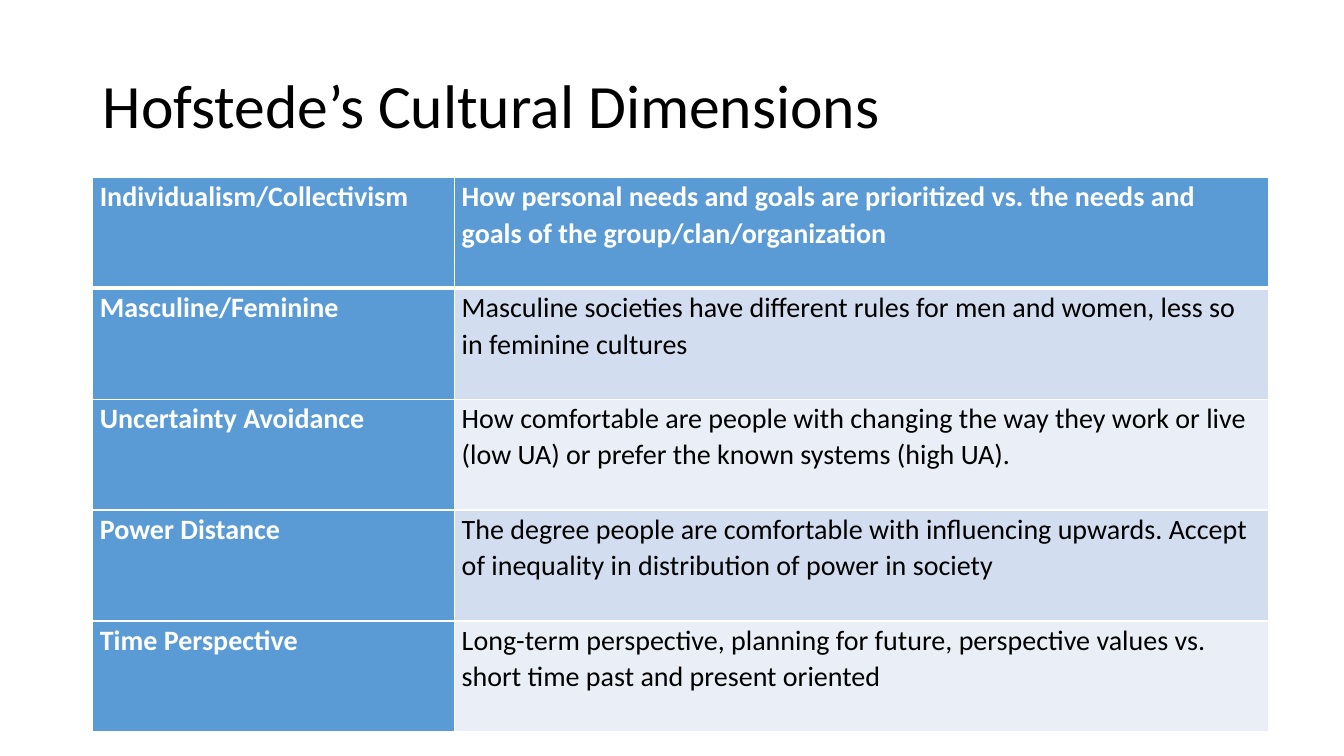
from lxml import etree
from pptx import Presentation
from pptx.dml.color import RGBColor
from pptx.enum.text import MSO_ANCHOR
from pptx.oxml.ns import qn
from pptx.util import Inches, Pt

# Content
TITLE = "Hofstede’s Cultural Dimensions"
DIMENSIONS = [
    ("Individualism/Collectivism",
     "How personal needs and goals are prioritized vs. the needs and goals of the group/clan/organization"),
    ("Masculine/Feminine",
     "Masculine societies have different rules for men and women, less so in feminine cultures"),
    ("Uncertainty Avoidance",
     "How comfortable are people with changing the way they work or live (low UA) or prefer the known systems (high UA)."),
    ("Power Distance",
     "The degree people are comfortable with influencing upwards. Accept of inequality in distribution of power in society"),
    ("Time Perspective",
     "Long-term perspective, planning for future, perspective values vs. short time past and present oriented"),
]

# Style
FONT = "Calibri"
BLACK = RGBColor(0x00, 0x00, 0x00)
WHITE = RGBColor(0xFF, 0xFF, 0xFF)
BLUE = RGBColor(0x5B, 0x9B, 0xD5)
BANDS = [RGBColor(0xEA, 0xEF, 0xF7), RGBColor(0xD2, 0xDE, 0xEF)]
MIDDLE = MSO_ANCHOR.MIDDLE

# Layout in inches
LEFT = 0.92
TITLE_TOP, TITLE_WIDTH, TITLE_HEIGHT = 0.4, 11.5, 1.36
TABLE_TOP = TITLE_TOP + TITLE_HEIGHT
COLUMNS = (3.59, 8.07)
ROW_HEIGHT = 1.1
CELL_MARGIN = 0.07
THIN, THICK = 1, 3


def write(frame, text, size, color, spacing, bold=False):
    para = frame.paragraphs[0]
    para.line_spacing = spacing
    span = para.add_run()
    span.text = text
    span.font.name = FONT
    span.font.size = Pt(size)
    span.font.bold = bold
    span.font.color.rgb = color


def add_borders(cell, top, bottom):
    properties = cell._tc.get_or_add_tcPr()
    for side, width in (("L", THIN), ("R", THIN), ("T", top), ("B", bottom)):
        line = etree.SubElement(properties, qn("a:ln" + side), w=str(Pt(width)))
        fill = etree.SubElement(line, qn("a:solidFill"))
        etree.SubElement(fill, qn("a:srgbClr"), val=str(WHITE))


deck = Presentation()
deck.slide_width, deck.slide_height = Inches(13.33), Inches(7.5)
page = deck.slides.add_slide(deck.slide_layouts[6])

# Title
box = page.shapes.add_textbox(Inches(LEFT), Inches(TITLE_TOP),
                              Inches(TITLE_WIDTH), Inches(TITLE_HEIGHT))
box.text_frame.word_wrap = True
box.text_frame.vertical_anchor = MIDDLE
write(box.text_frame, TITLE, 44, BLACK, 0.9)

# Table of dimensions
table = page.shapes.add_table(
    len(DIMENSIONS), len(COLUMNS), Inches(LEFT), Inches(TABLE_TOP),
    Inches(sum(COLUMNS)), Inches(ROW_HEIGHT * len(DIMENSIONS))).table
for column, width in zip(table.columns, COLUMNS):
    column.width = Inches(width)

for row_index, dimension in enumerate(DIMENSIONS):
    table.rows[row_index].height = Inches(ROW_HEIGHT)
    for column_index, text in enumerate(dimension):
        heading = row_index == 0 or column_index == 0
        cell = table.cell(row_index, column_index)
        cell.margin_left = cell.margin_right = Inches(CELL_MARGIN)
        cell.margin_top = cell.margin_bottom = 0
        add_borders(cell, THICK if row_index == 1 else THIN,
                    THICK if row_index == 0 else THIN)
        cell.fill.solid()
        cell.fill.fore_color.rgb = BLUE if heading else BANDS[row_index % 2]
        write(cell.text_frame, text, 20, WHITE if heading else BLACK, 1.07, heading)

deck.save("out.pptx")
